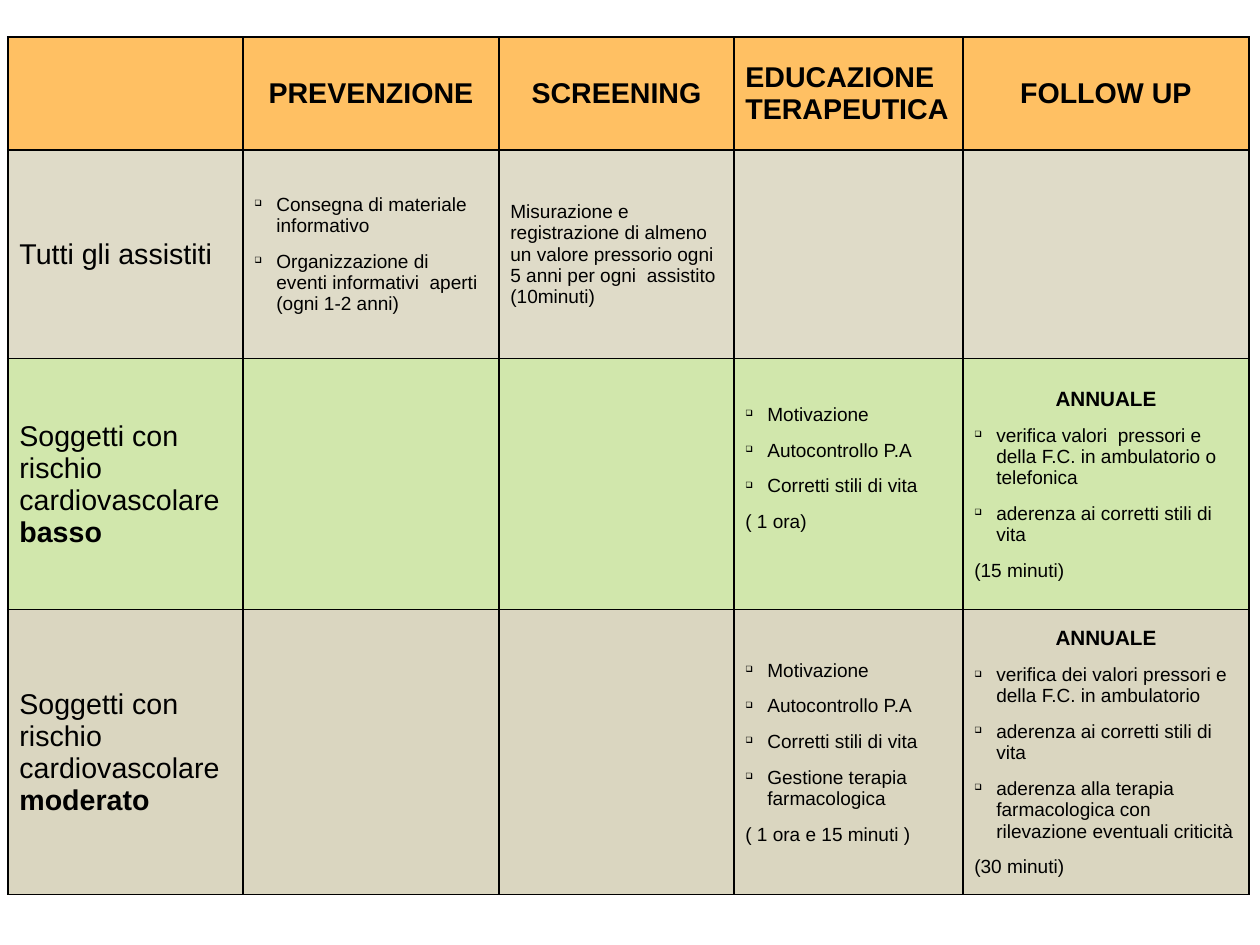
import dataclasses

import pptx
import pptx.dml.color
import pptx.enum.text
import pptx.oxml
import pptx.oxml.ns
import pptx.util
from lxml import etree

PX = 8000  # EMU in one px, 1260 px across the slide
ALIGN = pptx.enum.text.PP_ALIGN
qn = pptx.oxml.ns.qn


# Theme: colours, type sizes and paragraph styles
@dataclasses.dataclass(frozen=True)
class Theme:
    font: str = "Arial"
    ink: str = "000000"
    header: tuple = ("FF9900", 61)  # colour, opacity in percent
    everyone: tuple = ("BAB288", 46)
    low_risk: tuple = ("AAD367", 54)
    moderate_risk: tuple = ("AFA575", 45)
    side_line: float = 1.5
    row_line: float = 0.75
    block_gap: int = 9
    bullet: str = "❑"
    bullet_percent: int = 45
    hanging: int = 22
    styles: dict = dataclasses.field(default_factory=lambda: {
        "heading": {"size": 18, "bold": True, "align": ALIGN.CENTER},
        "left heading": {"size": 18, "bold": True, "align": ALIGN.LEFT},
        "label": {"size": 18, "bold": False, "align": ALIGN.LEFT},
        "title": {"size": 13, "bold": True, "align": ALIGN.CENTER},
        "item": {"size": 12, "bold": False, "align": ALIGN.LEFT},
        "note": {"size": 12, "bold": False, "align": ALIGN.LEFT},
    })


# Content: a cell is a list of blocks, a block is a style and its lines
def block(style, text):
    return (style, text.split("\n"))


def items(*texts):
    return [block("item", text) for text in texts]


def risk_label(level):
    return [block("label", "Soggetti con rischio\ncardiovascolare"),
            block("left heading", level)]


EDUCATION = items("Motivazione", "Autocontrollo P.A", "Corretti stili di vita")
YEARLY = [block("title", "ANNUALE")]
LIFESTYLE = items("aderenza ai corretti stili di\nvita")

HEADER_ROW = [
    [],
    [block("heading", "PREVENZIONE")],
    [block("heading", "SCREENING")],
    [block("left heading", "EDUCAZIONE TERAPEUTICA")],
    [block("heading", "FOLLOW UP")],
]
EVERYONE_ROW = [
    [block("label", "Tutti gli assistiti")],
    items("Consegna di materiale\ninformativo",
          "Organizzazione di\neventi informativi  aperti\n(ogni 1-2 anni)"),
    [block("note", "Misurazione e registrazione di almeno un valore pressorio "
                   "ogni 5 anni per ogni  assistito\n(10minuti)")],
    [],
    [],
]
LOW_RISK_ROW = [
    risk_label("basso"),
    [],
    [],
    EDUCATION + [block("note", "( 1 ora)")],
    YEARLY
    + items("verifica valori  pressori e\ndella F.C. in ambulatorio o\ntelefonica")
    + LIFESTYLE + [block("note", "(15 minuti)")],
]
MODERATE_RISK_ROW = [
    risk_label("moderato"),
    [],
    [],
    EDUCATION + items("Gestione terapia\nfarmacologica")
    + [block("note", "( 1 ora e 15 minuti )")],
    YEARLY
    + items("verifica dei valori pressori e\ndella F.C. in ambulatorio")
    + LIFESTYLE
    + items("aderenza alla terapia\nfarmacologica con\nrilevazione eventuali criticità")
    + [block("note", "(30 minuti)")],
]


class SlideBuilder:
    def __init__(self, presentation, theme):
        self.theme = theme
        self.slide = presentation.slides.add_slide(presentation.slide_layouts[6])

    def table(self, left, top, widths, heights, rows, fills):
        frame = self.slide.shapes.add_table(
            len(heights), len(widths),
            *(value * PX for value in (left, top, sum(widths), sum(heights))))
        table = frame.table
        table.first_row = table.horz_banding = False
        for column, width in zip(table.columns, widths):
            column.width = width * PX
        for row_index, (height, contents, fill) in enumerate(zip(heights, rows, fills)):
            table.rows[row_index].height = height * PX
            for column_index, blocks in enumerate(contents):
                cell = table.cell(row_index, column_index)
                self.borders(cell)
                self.fill(cell, *fill)
                self.text(cell, blocks)
        return table

    def borders(self, cell):
        properties = cell._tc.get_or_add_tcPr()
        sides = {"a:lnL": self.theme.side_line, "a:lnR": self.theme.side_line,
                 "a:lnT": self.theme.row_line, "a:lnB": self.theme.row_line}
        for tag, width in sides.items():
            line = etree.SubElement(properties, qn(tag), w=str(pptx.util.Pt(width)))
            solid = etree.SubElement(line, qn("a:solidFill"))
            etree.SubElement(solid, qn("a:srgbClr"), val=self.theme.ink)

    def fill(self, cell, color, opacity):
        cell.fill.solid()
        cell.fill.fore_color.rgb = pptx.dml.color.RGBColor.from_string(color)
        solid = cell._tc.tcPr.find(qn("a:solidFill"))
        etree.SubElement(solid[0], qn("a:alpha"), val=str(opacity * 1000))

    def text(self, cell, blocks):
        cell.vertical_anchor = pptx.enum.text.MSO_ANCHOR.MIDDLE
        paragraph = None
        for style, lines in blocks:
            for line_index, line in enumerate(lines):
                first = paragraph is None
                paragraph = cell.text_frame.paragraphs[0] if first else cell.text_frame.add_paragraph()
                spaced = not first and line_index == 0 and "heading" not in style
                self.paragraph(paragraph, line, style, spaced)
                if style == "item":
                    self.indent(paragraph, line_index == 0)

    def paragraph(self, paragraph, line, style, spaced):
        values = self.theme.styles[style]
        paragraph.alignment = values["align"]
        paragraph.space_before = pptx.util.Pt(self.theme.block_gap if spaced else 0)
        run = paragraph.add_run()
        run.text = line
        run.font.color.rgb = pptx.dml.color.RGBColor.from_string(self.theme.ink)
        font_format = {"name": self.theme.font, "bold": values["bold"],
                       "size": pptx.util.Pt(values["size"])}
        for name, value in font_format.items():
            setattr(run.font, name, value)

    def indent(self, paragraph, bulleted):
        properties = paragraph._p.get_or_add_pPr()
        hanging = self.theme.hanging * PX
        properties.set("marL", str(hanging))
        properties.set("indent", str(-hanging if bulleted else 0))
        if bulleted:
            etree.SubElement(properties, qn("a:buSzPct"),
                             val=str(self.theme.bullet_percent * 1000))
            etree.SubElement(properties, qn("a:buChar"), char=self.theme.bullet)


def main():
    presentation = pptx.Presentation()
    presentation.slide_width = 1260 * PX
    presentation.slide_height = 945 * PX
    theme = Theme()

    # Care plan table
    table = SlideBuilder(presentation, theme).table(
        8, 37,
        widths=[235, 256, 235, 229, 286],
        heights=[113, 209, 251, 285],
        rows=[HEADER_ROW, EVERYONE_ROW, LOW_RISK_ROW, MODERATE_RISK_ROW],
        fills=[theme.header, theme.everyone, theme.low_risk, theme.moderate_risk])

    # The low-risk education text sits above the middle of its cell
    table.cell(2, 3).margin_bottom = 38 * PX
    presentation.save("out.pptx")


if __name__ == "__main__":
    main()
